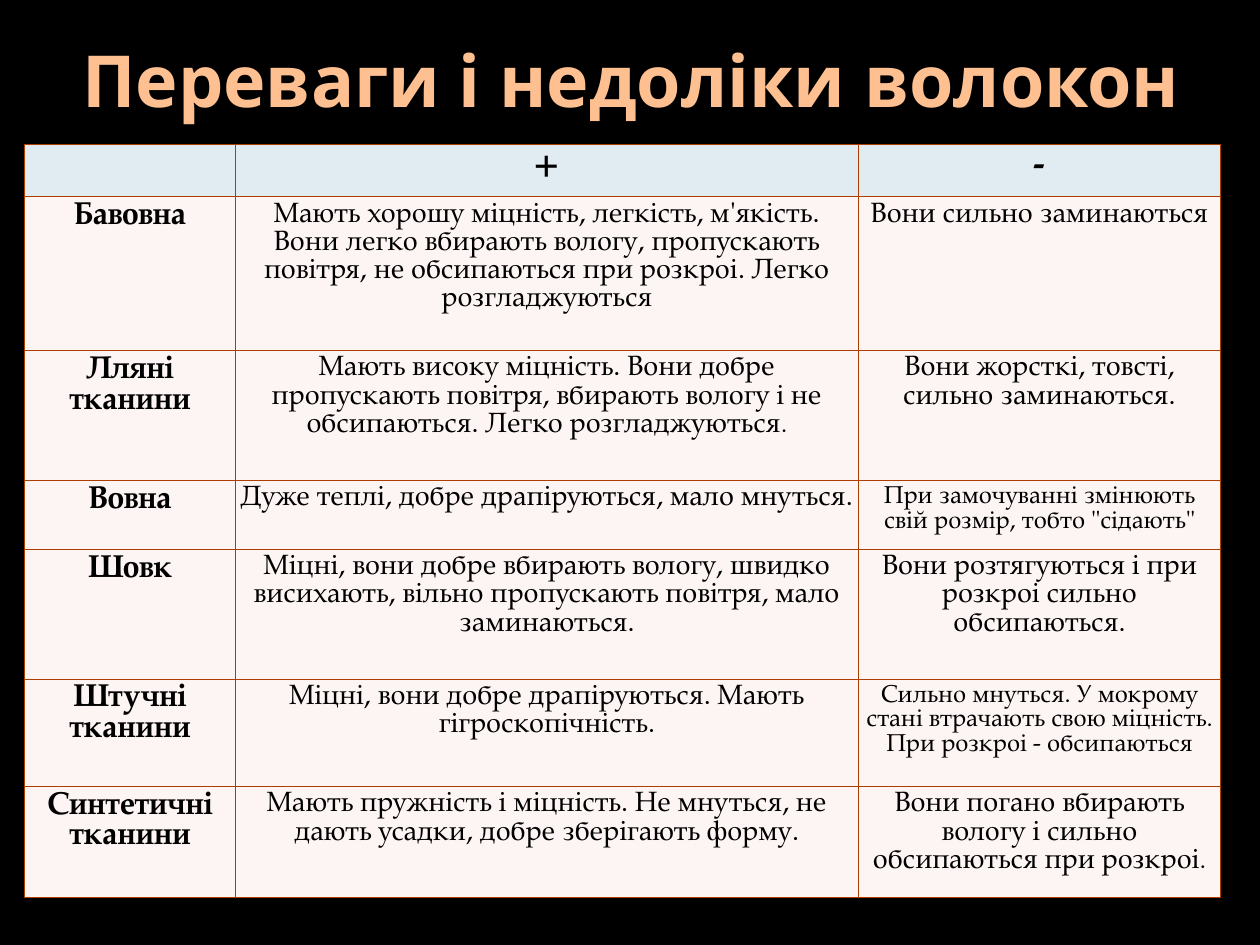
from lxml import etree
from pptx import Presentation
from pptx.dml.color import RGBColor
from pptx.enum.text import MSO_ANCHOR, PP_ALIGN
from pptx.oxml.ns import qn
from pptx.util import Cm, Pt

CENTER = PP_ALIGN.CENTER
MIDDLE = MSO_ANCHOR.MIDDLE
COLORS = {"back": "000000", "title": "FFC091", "head": "E0EBF2",
          "body": "FDF5F3", "text": "000000", "line": "AE3D00"}
SANS = "Noto Sans"
SERIF = "TeX Gyre Pagella"

WIDTHS = [4.24, 12.57, 7.29]
HEIGHTS = [0.76, 3.1, 2.62, 1.22, 2.62, 2.16, 2.16]
ROWS = [
    ("Бавовна",
     [("Мають хорошу міцність, легкість, м'якість. Вони легко вбирають вологу, "
       "пропускають повітря, не обсипаються при розкроі. Легко розгладжуються", 16)],
     [("Вони сильно заминаються", 16)]),
    ("Лляні тканини",
     [("Мають високу міцність. Вони добре пропускають повітря, вбирають вологу "
       "і не обсипаються. Легко розгладжуються", 16), (".", 14)],
     [("Вони жорсткі, товсті, сильно заминаються.", 16)]),
    ("Вовна",
     [("Дуже теплі, добре драпіруються, мало мнуться.", 16)],
     [('При замочуванні змінюють свій розмір, тобто "сідають"', 14)]),
    ("Шовк",
     [("Міцні, вони добре вбирають вологу, швидко висихають, вільно пропускають "
       "повітря, мало заминаються.", 16)],
     [("Вони розтягуються і при розкроі сильно обсипаються.", 16)]),
    ("Штучні тканини",
     [("Міцні, вони добре драпіруються. Мають гігроскопічність.", 16)],
     [("Сильно мнуться. У мокрому стані втрачають свою міцність. "
       "При розкроі - обсипаються", 14)]),
    ("Синтетичні тканини",
     [("Мають пружність і міцність. Не мнуться, не дають усадки, "
       "добре зберігають форму.", 16)],
     [("Вони погано вбирають вологу і сильно обсипаються при розкроі", 16),
      (".", 14)]),
]


def color(name):
    return RGBColor.from_string(COLORS[name])


def add_run(para, text, size, font, ink, bold):
    run = para.add_run()
    run.text = text
    run.font.size = Pt(size)
    run.font.name = font
    run.font.bold = bold
    run.font.color.rgb = color(ink)


def add_title(slide, text):
    box = slide.shapes.add_textbox(Cm(1.3), Cm(0), Cm(22.86), Cm(3.18))
    frame = box.text_frame
    frame.word_wrap = True
    frame.vertical_anchor = MIDDLE
    para = frame.paragraphs[0]
    para.alignment = CENTER
    add_run(para, text, 41, SANS, "title", True)


def add_edges(cell):
    props = cell._tc.get_or_add_tcPr()
    for spot, side in enumerate(("lnL", "lnR", "lnT", "lnB")):
        line = etree.Element(qn(f"a:{side}"), w=str(Pt(0.75)))
        fill = etree.SubElement(line, qn("a:solidFill"))
        etree.SubElement(fill, qn("a:srgbClr"), val=COLORS["line"])
        props.insert(spot, line)


def fill_cell(cell, runs, fill, bold):
    cell.margin_left = cell.margin_right = Cm(0.1)
    cell.margin_top = cell.margin_bottom = Cm(0.1)
    cell.fill.solid()
    cell.fill.fore_color.rgb = color(fill)
    add_edges(cell)
    para = cell.text_frame.paragraphs[0]
    para.alignment = CENTER
    para.font.size = Pt(16)
    para.font.name = SERIF
    for text, size in runs:
        add_run(para, text, size, SERIF, "text", bold)


def add_grid(slide):
    head = [[], [("+", 20)], [("-", 20)]]
    rows = [head] + [[[(name, 18)], plus, minus] for name, plus, minus in ROWS]
    grid = slide.shapes.add_table(len(rows), len(WIDTHS), Cm(0.5), Cm(2.92),
                                  Cm(sum(WIDTHS)), Cm(sum(HEIGHTS))).table
    for col, width in zip(grid.columns, WIDTHS):
        col.width = Cm(width)
    for row, height in zip(grid.rows, HEIGHTS):
        row.height = Cm(height)
    for r, row in enumerate(rows):
        for c, runs in enumerate(row):
            fill = "body" if r else "head"
            fill_cell(grid.cell(r, c), runs, fill, r == 0 or c == 0)


def main():
    deck = Presentation()
    deck.slide_width, deck.slide_height = Cm(25.4), Cm(19.05)
    slide = deck.slides.add_slide(deck.slide_layouts[6])
    slide.background.fill.solid()
    slide.background.fill.fore_color.rgb = color("back")
    add_title(slide, "Переваги і недоліки волокон")
    add_grid(slide)
    deck.save("out.pptx")


if __name__ == "__main__":
    main()
